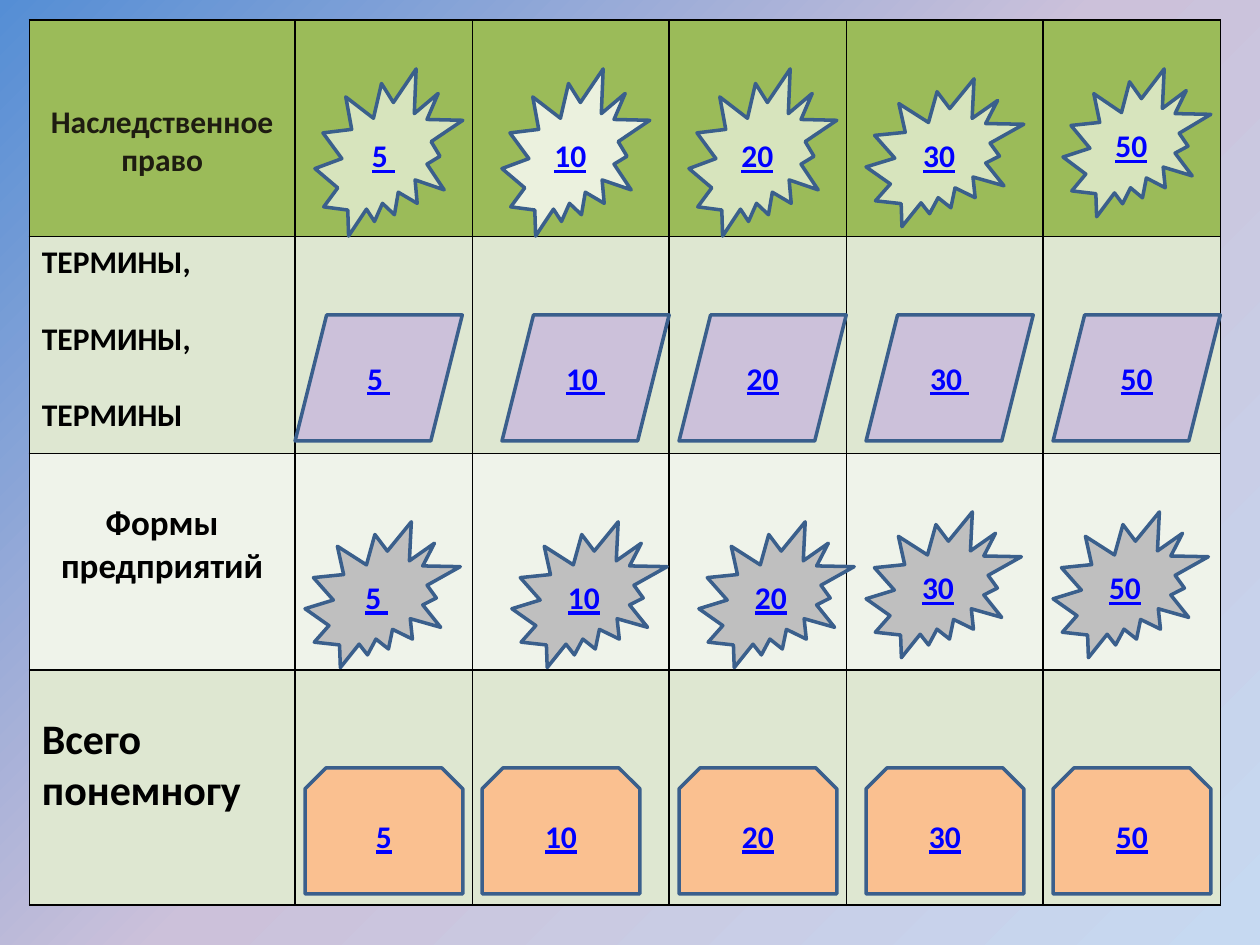
from dataclasses import dataclass

from pptx import Presentation
from pptx.dml.color import RGBColor
from pptx.enum.shapes import MSO_SHAPE
from pptx.enum.text import MSO_ANCHOR, PP_ALIGN
from pptx.oxml import parse_xml
from pptx.util import Cm, Pt

SEAL = MSO_SHAPE.EXPLOSION2
SLANT = MSO_SHAPE.PARALLELOGRAM
SNIPPED = MSO_SHAPE.SNIP_2_SAME_RECTANGLE
LEFT, CENTER = PP_ALIGN.LEFT, PP_ALIGN.CENTER
MIDDLE = MSO_ANCHOR.MIDDLE
NAMESPACES = (
    'xmlns:a="http://schemas.openxmlformats.org/drawingml/2006/main" '
    'xmlns:p="http://schemas.openxmlformats.org/presentationml/2006/main"'
)


@dataclass(frozen=True)
class Theme:
    font: str = "Calibri"
    body: int = 18
    medium: int = 20
    large: int = 24
    black: str = "000000"
    heading: str = "1E1C11"
    link: str = "0000FF"
    outline: str = "3A5F8C"
    green: str = "9BBB59"
    band: str = "DEE7D1"
    pale_band: str = "EFF3EA"
    lime: str = "D7E4BD"
    pale_lime: str = "EBF1DE"
    lilac: str = "CCC1DA"
    gray: str = "BFBFBF"
    orange: str = "FAC090"
    backdrop: tuple = ((0, "C6D9F1"), (50, "CCC1DA"), (100, "558ED5"))


theme = Theme()


def style_paragraph(para, size, color, align):
    para.alignment = align
    for span in para.runs:
        span.font.name = theme.font
        span.font.size = Pt(size)
        span.font.bold = True
        span.font.color.rgb = RGBColor.from_string(color)


deck = Presentation()
deck.slide_width, deck.slide_height = Cm(25.4), Cm(19.05)
page = deck.slides.add_slide(deck.slide_layouts[6])

stops = "".join(
    f'<a:gs pos="{position * 1000}"><a:srgbClr val="{color}"/></a:gs>'
    for position, color in theme.backdrop
)
page.element.cSld.insert(0, parse_xml(
    f'<p:bg {NAMESPACES}><p:bgPr><a:gradFill rotWithShape="1"><a:gsLst>{stops}</a:gsLst>'
    '<a:path path="circle"><a:fillToRect l="100000" t="100000"/></a:path>'
    '</a:gradFill><a:effectLst/></p:bgPr></p:bg>'
))

column_widths = [5.36, 3.57, 3.97, 3.57, 3.97, 3.57]
row_heights = [4.37, 4.37, 4.37, 4.73]
topics = [
    ("Наследственное\nправо", theme.body, theme.heading, CENTER, 1.68, theme.green),
    ("ТЕРМИНЫ,\nТЕРМИНЫ,\nТЕРМИНЫ", theme.body, theme.black, LEFT, 0.13, theme.band),
    ("Формы предприятий", theme.medium, theme.black, CENTER, 0.99, theme.pale_band),
    ("Всего понемногу", theme.large, theme.black, LEFT, 0.9, theme.band),
]

board = page.shapes.add_table(
    len(row_heights), len(column_widths),
    Cm(0.59), Cm(0.4), Cm(sum(column_widths)), Cm(sum(row_heights)),
).table
board.first_row = board.horz_banding = False
for column, width in zip(board.columns, column_widths):
    column.width = Cm(width)

for row, height, topic in zip(board.rows, row_heights, topics):
    text, size, color, align, top_margin, fill = topic
    row.height = Cm(height)
    for cell in row.cells:
        properties = cell._tc.get_or_add_tcPr()
        for side in "LRTB":
            properties.append(parse_xml(
                f'<a:ln{side} {NAMESPACES} w="{Pt(1)}"><a:solidFill>'
                f'<a:srgbClr val="{theme.black}"/></a:solidFill></a:ln{side}>'
            ))
        cell.fill.solid()
        cell.fill.fore_color.rgb = RGBColor.from_string(fill)
    label = row.cells[0]
    label.margin_top = Cm(top_margin)
    label.text_frame.text = text
    for para in label.text_frame.paragraphs:
        style_paragraph(para, size, color, align)

for para in board.cell(1, 0).text_frame.paragraphs[1:]:
    para.space_before = Pt(22)

tall, wide, small = (2.98, 3.37), (3.18, 2.98), (2.98, 2.98)
slant, burst, snip = (3.37, 2.54), (3.13, 2.94), (3.18, 2.54)
button_rows = [
    (SEAL, theme.lime, ["5 ", "10", "20", "30", "50"],
     [6.35, 10.12, 13.89, 17.46, 21.43], [1.39, 1.39, 1.39, 1.59, 1.39],
     [tall, tall, tall, wide, small]),
    (SLANT, theme.lilac, ["5 ", "10 ", "20", "30 ", "50"],
     [5.95, 10.12, 13.69, 17.46, 21.23], [6.35] * 5, [slant] * 5),
    (SEAL, theme.gray, ["5 ", "10", "20", "30", "50"],
     [6.15, 10.32, 14.09, 17.46, 21.23], [10.52] * 3 + [10.32] * 2, [burst] * 5),
    (SNIPPED, theme.orange, ["5", "10", "20", "30", "50"],
     [6.15, 9.72, 13.69, 17.46, 21.23], [15.48] * 5, [snip] * 5),
]

buttons = []
for outline, fill, scores, lefts, tops, sizes in button_rows:
    for score, left, top, (width, height) in zip(scores, lefts, tops, sizes):
        button = page.shapes.add_shape(outline, Cm(left), Cm(top), Cm(width), Cm(height))
        button.shadow.inherit = False
        button.fill.solid()
        button.fill.fore_color.rgb = RGBColor.from_string(fill)
        button.line.color.rgb = RGBColor.from_string(theme.outline)
        button.line.width = Pt(2)
        button.text_frame.text = score
        button.text_frame.vertical_anchor = MIDDLE
        para = button.text_frame.paragraphs[0]
        style_paragraph(para, theme.body, theme.link, CENTER)
        para.runs[0].font.underline = True
        buttons.append(button)

buttons[1].fill.fore_color.rgb = RGBColor.from_string(theme.pale_lime)

deck.save("out.pptx")
